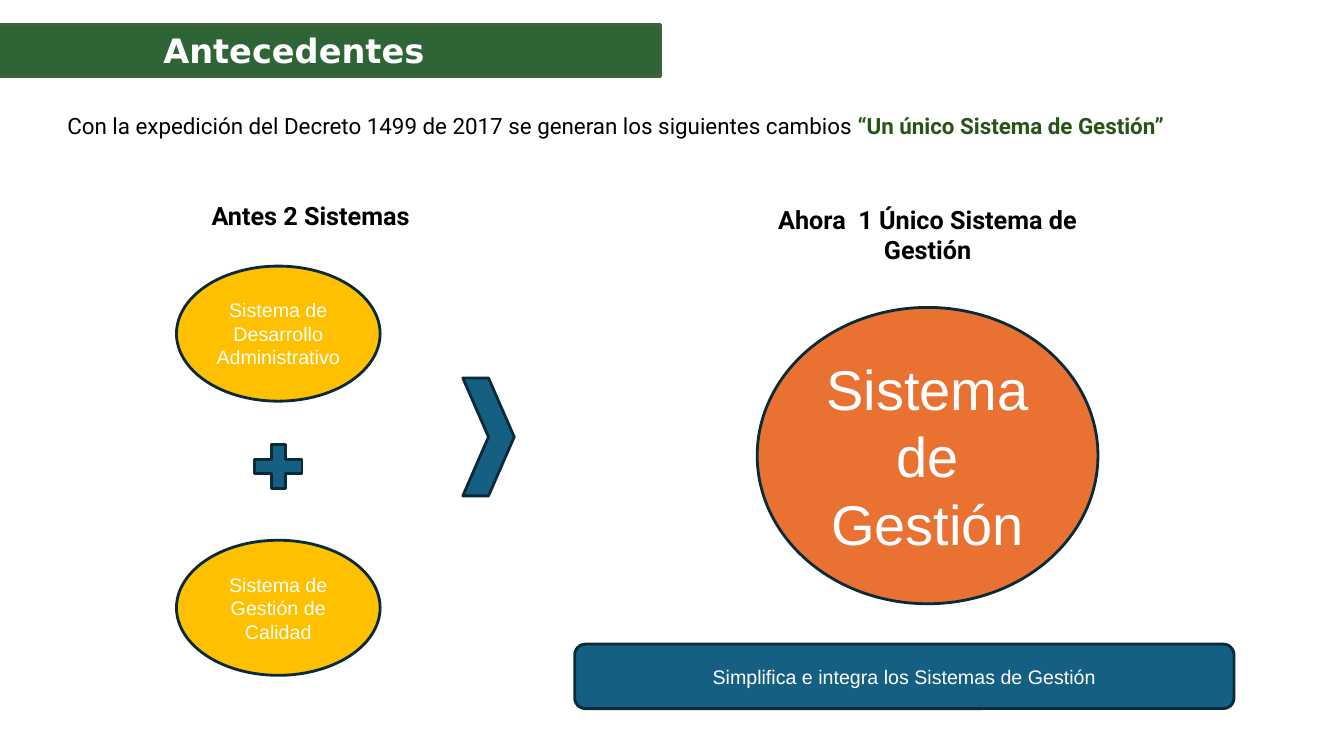
from lxml import etree
from pptx import Presentation
from pptx import util as u
from pptx.dml.color import RGBColor
from pptx.enum import shapes, text
from pptx.oxml import ns

COLORS = {
    "banner": "2F6437", "banner_line": "3D643D", "outline": "092A39",
    "blue": "156082", "yellow": "FFC000", "orange": "E97132",
    "accent": "275417", "black": "000000", "white": "FFFFFF",
}
SHAPE = shapes.MSO_SHAPE


def color(name):
    return RGBColor.from_string(COLORS[name])


def style_span(span, font, size, tint, bold=False):
    span.font.name = font
    span.font.size = u.Pt(size)
    span.font.bold = bold
    span.font.color.rgb = color(tint)


def paint(shape, fill, line):
    shape.fill.solid()
    shape.fill.fore_color.rgb = color(fill)
    shape.line.color.rgb = color(line)
    shape.line.width = u.Pt(2)


def add_figure(page, kind, box, fill, words="", size=14):
    """Add an outlined preset shape with optional centred text."""
    figure = page.shapes.add_shape(kind, *map(u.Inches, box))
    figure.shadow.inherit = False
    paint(figure, fill, "outline")
    if words:
        frame = figure.text_frame
        frame.text = words
        frame.word_wrap = True
        frame.vertical_anchor = text.MSO_ANCHOR.MIDDLE
        para = frame.paragraphs[0]
        para.alignment = text.PP_ALIGN.CENTER
        style_span(para.runs[0], "Arial", size, "white")


def add_label(page, box, words, size=18, bold=True, align=text.PP_ALIGN.LEFT):
    label = page.shapes.add_textbox(*map(u.Inches, box))
    label.text_frame.word_wrap = True
    para = label.text_frame.paragraphs[0]
    para.text = words
    para.alignment = align
    style_span(para.runs[0], "Roboto", size, "black", bold)
    return para


def build_title(page, box):
    """Turn the title placeholder into the rounded banner."""
    title = page.shapes.title
    title.left, title.top, title.width, title.height = map(u.Inches, box)
    outline = etree.SubElement(title.element.spPr, ns.qn("a:prstGeom"), prst="roundRect")
    etree.SubElement(outline, ns.qn("a:avLst"))
    paint(title, "banner", "banner_line")
    frame = title.text_frame
    frame.text = "Antecedentes"
    frame.auto_size = text.MSO_AUTO_SIZE.NONE
    frame.vertical_anchor = text.MSO_ANCHOR.MIDDLE
    para = frame.paragraphs[0]
    para.alignment = text.PP_ALIGN.CENTER
    style_span(para.runs[0], "DejaVu Sans", 24, "white", True)


def build_intro(page, box):
    para = add_label(
        page, box,
        "Con la expedición del Decreto 1499 de 2017 se generan los siguientes cambios ",
        size=16, bold=False)
    span = para.add_run()
    span.text = "“Un único Sistema de Gestión”"
    style_span(span, "Roboto", 16, "accent", True)


def build_before(page, left, top):
    """Place the two former systems, joined by a plus sign, and the chevron."""
    add_label(page, (left + 0.25, top, 3.1, 0.4), "Antes 2 Sistemas")
    systems = ("Sistema de Desarrollo Administrativo", "Sistema de Gestión de Calidad")
    for index, system in enumerate(systems):
        add_figure(page, SHAPE.OVAL, (left, top + 0.7 + 2.72 * index, 2.02, 1.34),
                   "yellow", system)
    add_figure(page, SHAPE.MATH_PLUS, (left + 0.69, top + 2.39, 0.64, 0.6), "blue")
    add_figure(page, SHAPE.CHEVRON, (left + 2.84, top + 1.81, 0.51, 1.17), "blue")


def build_after(page, left, top):
    """Place the single system and the bar with its benefit."""
    add_label(page, (left + 1.5, top, 4, 0.71), "Ahora  1 Único Sistema de Gestión",
              align=text.PP_ALIGN.CENTER)
    add_figure(page, SHAPE.OVAL, (left + 1.81, top + 1.07, 3.38, 2.94),
               "orange", "Sistema de Gestión", 40)
    add_figure(page, SHAPE.ROUNDED_RECTANGLE, (left, top + 4.41, 6.54, 0.64),
               "blue", "Simplifica e integra los Sistemas de Gestión")


def main():
    deck = Presentation()
    deck.slide_width, deck.slide_height = u.Inches(13.33), u.Inches(7.5)
    page = deck.slides.add_slide(deck.slide_layouts.get_by_name("Title Only"))
    build_title(page, (-0.72, 0.24, 7.27, 0.52))
    build_intro(page, (0.57, 1.06, 11.97, 0.37))
    build_before(page, 1.75, 1.94)
    build_after(page, 5.7, 1.98)
    deck.save("out.pptx")


if __name__ == "__main__":
    main()
